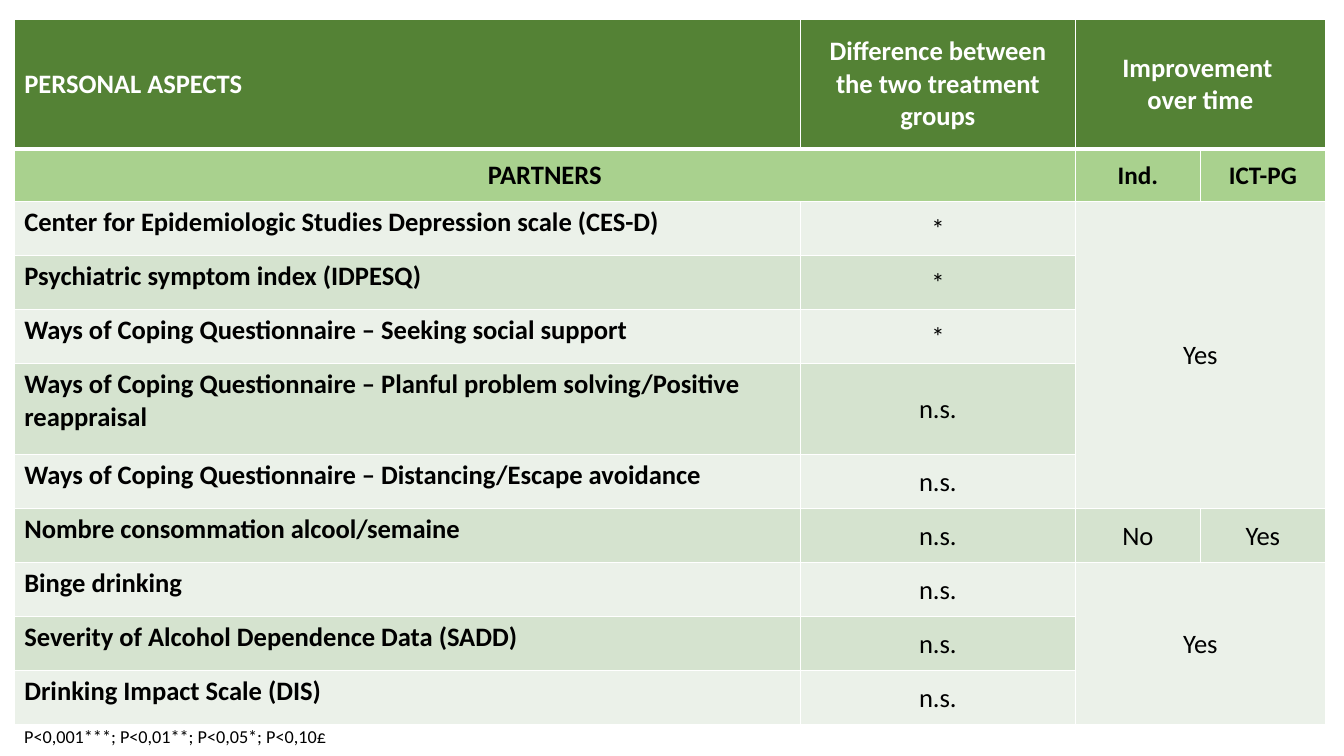
from dataclasses import dataclass

from lxml import etree
from pptx import Presentation
from pptx.dml.color import RGBColor
from pptx.enum.text import MSO_ANCHOR, PP_ALIGN
from pptx.oxml.ns import qn
from pptx.util import Cm, Pt

CENTER, LEFT = PP_ALIGN.CENTER, PP_ALIGN.LEFT
MIDDLE, TOP = MSO_ANCHOR.MIDDLE, MSO_ANCHOR.TOP

WHITE = RGBColor(0xFF, 0xFF, 0xFF)
BLACK = RGBColor(0x00, 0x00, 0x00)
DARK_GREEN = RGBColor(0x54, 0x82, 0x35)
LIGHT_GREEN = RGBColor(0xA9, 0xD1, 0x8E)
BANDS = (RGBColor(0xEB, 0xF1, 0xE9), RGBColor(0xD5, 0xE3, 0xCF))

FONT = "Calibri"
COLUMN_WIDTHS = (19.81, 6.93, 3.15, 3.15)
HEADER_HEIGHT, GROUP_HEIGHT, ROW_HEIGHT, TALL_HEIGHT = 3.28, 1.32, 1.36, 2.3

MEASURES = (
    ("Center for Epidemiologic Studies Depression scale (CES-D)", "*"),
    ("Psychiatric symptom index (IDPESQ)", "*"),
    ("Ways of Coping Questionnaire – Seeking social support", "*"),
    ("Ways of Coping Questionnaire – Planful problem solving/Positive reappraisal", "n.s."),
    ("Ways of Coping Questionnaire – Distancing/Escape avoidance", "n.s."),
    ("Nombre consommation alcool/semaine", "n.s."),
    ("Binge drinking", "n.s."),
    ("Severity of Alcohol Dependence Data (SADD)", "n.s."),
    ("Drinking Impact Scale (DIS)", "n.s."),
)
TALL_MEASURE = 3
IMPROVEMENTS = ((2, 2, 6, 3, "Yes"), (7, 2, 7, 2, "No"), (7, 3, 7, 3, "Yes"), (8, 2, 10, 3, "Yes"))
MERGES = ((0, 2, 0, 3), (1, 0, 1, 1))


@dataclass
class Box:
    left: float
    top: float
    width: float
    height: float


def format_text(frame, size, color, bold, align):
    for para in frame.paragraphs:
        para.alignment = align
        for span in para.runs:
            span.font.name = FONT
            span.font.size = Pt(size)
            span.font.bold = bold
            span.font.color.rgb = color


def write_cell(cell, text, size=19, color=BLACK, bold=True, align=CENTER, anchor=MIDDLE):
    cell.text_frame.text = text
    cell.vertical_anchor = anchor
    format_text(cell.text_frame, size, color, bold, align)


def write_result(cell, text):
    write_cell(cell, text, bold=False)
    cell.margin_left = cell.margin_top = cell.margin_right = Cm(0.03)
    cell.margin_bottom = 0


def paint_cell(cell, color, top_width, bottom_width):
    cell.fill.solid()
    cell.fill.fore_color.rgb = color
    properties = cell._tc.get_or_add_tcPr()
    sides = (("a:lnL", 1), ("a:lnR", 1), ("a:lnT", top_width), ("a:lnB", bottom_width))
    for position, (tag, width) in enumerate(sides):
        line = etree.Element(qn(tag), w=str(Pt(width)))
        fill = etree.SubElement(line, qn("a:solidFill"))
        etree.SubElement(fill, qn("a:srgbClr"), val=str(WHITE))
        properties.insert(position, line)


def row_color(row):
    if row == 0:
        return DARK_GREEN
    if row == 1:
        return LIGHT_GREEN
    return BANDS[row % 2]


def add_results_table(page, box):
    heights = [HEADER_HEIGHT, GROUP_HEIGHT] + [ROW_HEIGHT] * len(MEASURES)
    heights[2 + TALL_MEASURE] = TALL_HEIGHT
    table = page.shapes.add_table(
        len(heights), len(COLUMN_WIDTHS),
        Cm(box.left), Cm(box.top), Cm(box.width), Cm(box.height),
    ).table
    for column, width in zip(table.columns, COLUMN_WIDTHS):
        column.width = Cm(width)
    for row, height in enumerate(heights):
        table.rows[row].height = Cm(height)
        for cell in table.rows[row].cells:
            paint_cell(cell, row_color(row), 3 if row == 1 else 1, 3 if row == 0 else 1)

    for top, left, bottom, right in MERGES:
        table.cell(top, left).merge(table.cell(bottom, right))
    write_cell(table.cell(0, 0), "PERSONAL ASPECTS", color=WHITE, align=LEFT)
    write_cell(table.cell(0, 1), "Difference between the two treatment groups", color=WHITE)
    write_cell(table.cell(0, 2), "Improvement \nover time", color=WHITE)
    write_cell(table.cell(1, 0), "PARTNERS")
    write_cell(table.cell(1, 2), "Ind.", size=18)
    write_cell(table.cell(1, 3), "ICT-PG", size=18)

    for row, (measure, difference) in enumerate(MEASURES, start=2):
        write_cell(table.cell(row, 0), measure, align=LEFT, anchor=TOP)
        write_result(table.cell(row, 1), difference)
    for top, left, bottom, right, answer in IMPROVEMENTS:
        cell = table.cell(top, left)
        if (top, left) != (bottom, right):
            cell.merge(table.cell(bottom, right))
        write_result(cell, answer)


def add_footnote(page, box):
    note = page.shapes.add_textbox(Cm(box.left), Cm(box.top), Cm(box.width), Cm(box.height))
    note.text_frame.word_wrap = True
    note.text_frame.text = "P<0,001***; P<0,01**; P<0,05*; P<0,10£"
    format_text(note.text_frame, 13, BLACK, False, LEFT)


def main():
    deck = Presentation()
    deck.slide_width, deck.slide_height = Cm(33.87), Cm(19.05)
    page = deck.slides.add_slide(deck.slide_layouts[6])
    add_results_table(page, Box(0.36, 0.48, 33.04, 17.68))
    add_footnote(page, Box(0.36, 18.16, 8.53, 0.81))
    deck.save("out.pptx")


if __name__ == "__main__":
    main()
